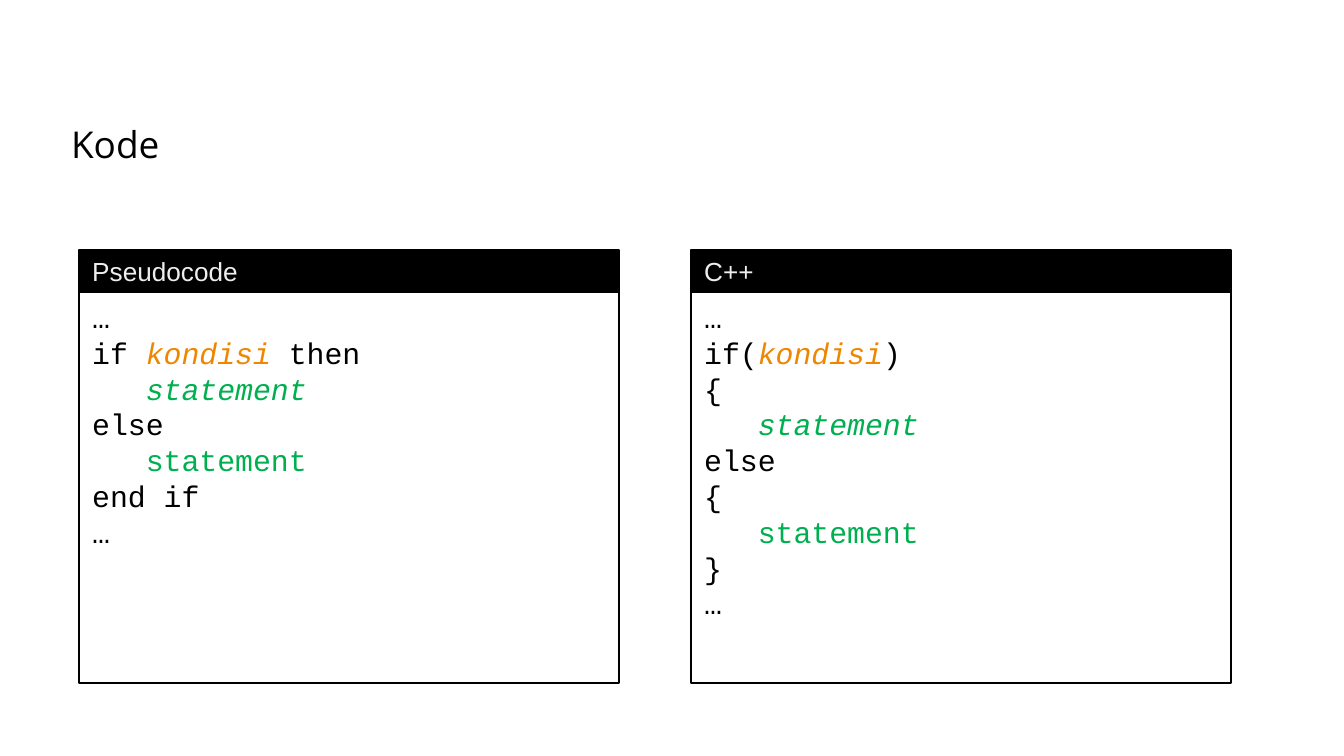
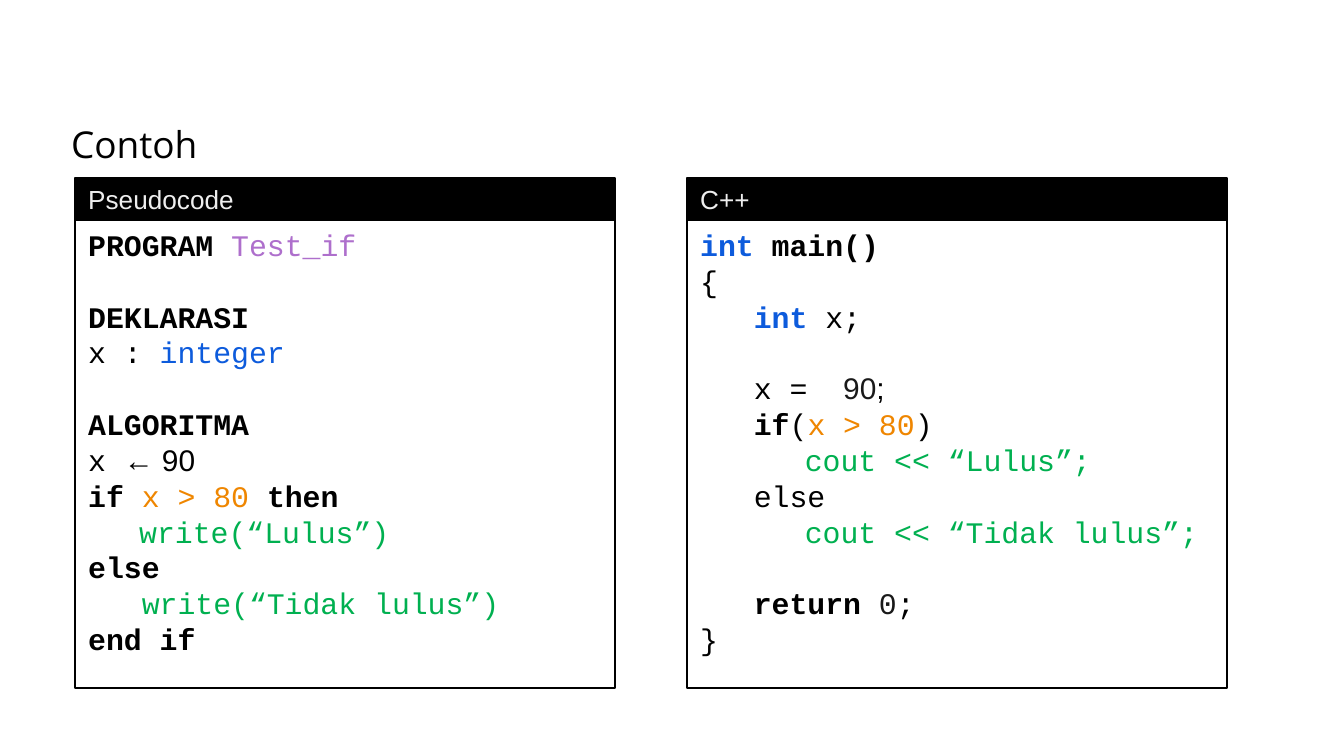
"""Build two slides that set pseudocode beside C++ for the if-else statement."""
import pptx
import pptx.dml.color
import pptx.enum.shapes
import pptx.enum.text
import pptx.util

RGB = pptx.dml.color.RGBColor
ANCHOR = pptx.enum.text.MSO_ANCHOR

BLACK = RGB(0x00, 0x00, 0x00)
WHITE = RGB(0xFF, 0xFF, 0xFF)
PALE = RGB(0xEE, 0xEE, 0xEE)
ORANGE = RGB(0xEF, 0x86, 0x00)
GREEN = RGB(0x00, 0xB0, 0x50)
VIOLET = RGB(0xAE, 0x6F, 0xCC)
BLUE = RGB(0x0D, 0x5B, 0xDC)
CHARCOAL = RGB(0x19, 0x19, 0x19)

PX = 914400 / 134.4
SLIDE_SIZE = (1344, 756)
TITLE_BOX = (58, 109, 1228, 58)
TITLE_INSET = 13
PANEL_WIDTH, PANEL_STEP = 540, 612
HEADING_HEIGHT = 42
HANGING = 51
LINE_PITCH = 19.2

STYLES = {
    "plain": {},
    "bold": {"bold": True},
    "condition": {"color": ORANGE},
    "condition name": {"color": ORANGE, "italic": True},
    "statement": {"color": GREEN},
    "statement name": {"color": GREEN, "italic": True},
    "program": {"color": VIOLET},
    "type": {"color": BLUE},
    "keyword type": {"color": BLUE, "bold": True},
    "digit": {"color": CHARCOAL},
    "arial": {"font": "Arial"},
    "arial digit": {"font": "Arial", "color": CHARCOAL},
}

KODE_PSEUDOCODE = [
    ["…"],
    ["if ", ("kondisi ", "condition name"), "then"],
    ["   ", ("statement", "statement name")],
    ["else"],
    ["   ", ("statement", "statement")],
    ["end if"],
    ["…"],
]
KODE_CPP = [
    ["…"],
    ["if(", ("kondisi", "condition name"), ")"],
    ["{"],
    ["   ", ("statement", "statement name")],
    ["else"],
    ["{"],
    ["   ", ("statement", "statement")],
    ["}"],
    ["…"],
]
CONTOH_PSEUDOCODE = [
    [("PROGRAM ", "bold"), ("Test_if", "program")],
    [],
    [("DEKLARASI", "bold")],
    ["x : ", ("integer", "type")],
    [],
    [("ALGORITMA", "bold")],
    ["x ", ("← 90", "arial")],
    [("if ", "bold"), ("x > 80 ", "condition"), ("then", "bold")],
    ["\t", ("write(“Lulus”)", "statement")],
    [("else", "bold")],
    [("   ", "bold"), ("write(“Tidak lulus”)", "statement")],
    [("end if", "bold")],
]
CONTOH_CPP = [
    [("int ", "keyword type"), ("main()", "bold")],
    ["{"],
    ["   ", ("int ", "keyword type"), "x;"],
    [],
    ["   x =  ", ("90", "arial digit"), (";", "arial")],
    ["   ", ("if", "bold"), "(", ("x > 80", "condition"), ")"],
    ["\t   ", ("cout << “Lulus”;", "statement")],
    ["   else"],
    ["\t   ", ("cout << “Tidak lulus”;", "statement")],
    [],
    [("   return ", "bold"), ("0", "digit"), ";"],
    ["}"],
]

SLIDES = [
    {"title": "Kode", "left": 79, "top": 250, "code_height": 391, "hanging_from": None,
     "panels": [("Pseudocode", KODE_PSEUDOCODE), ("C++", KODE_CPP)]},
    {"title": "Contoh", "left": 75, "top": 178, "code_height": 468, "hanging_from": (6, 4),
     "panels": [("Pseudocode", CONTOH_PSEUDOCODE), ("C++", CONTOH_CPP)]},
]


def px(length):
    return round(length * PX)


def write(frame, lines, font="Courier New", size=16, color=BLACK,
          anchor=ANCHOR.TOP, wrap=True, hanging_from=None):
    frame.word_wrap = wrap
    frame.vertical_anchor = anchor
    frame.auto_size = pptx.enum.text.MSO_AUTO_SIZE.NONE
    paragraph, gap = None, 0
    for number, line in enumerate(lines):
        if not line:
            gap += LINE_PITCH
            continue
        paragraph = frame.add_paragraph() if paragraph else frame.paragraphs[0]
        paragraph.alignment = pptx.enum.text.PP_ALIGN.LEFT
        paragraph.space_before = pptx.util.Pt(gap)
        gap = 0
        if hanging_from is not None and number >= hanging_from:
            properties = paragraph._p.get_or_add_pPr()
            properties.set("marL", str(px(HANGING)))
            properties.set("indent", str(-px(HANGING)))
        for part in line:
            words, style = (part, "plain") if isinstance(part, str) else part
            look = STYLES[style]
            run = paragraph.add_run()
            run.text = words
            run.font.name = look.get("font", font)
            run.font.size = pptx.util.Pt(size)
            run.font.bold = look.get("bold", False)
            run.font.italic = look.get("italic", False)
            run.font.color.rgb = look.get("color", color)


def add_box(slide, left, top, height, fill=None):
    box = slide.shapes.add_shape(pptx.enum.shapes.MSO_SHAPE.RECTANGLE,
                                 px(left), px(top), px(PANEL_WIDTH), px(height))
    box.shadow.inherit = False
    box.line.color.rgb = BLACK
    box.line.width = pptx.util.Pt(0.75)
    if fill is None:
        box.fill.background()
    else:
        box.fill.solid()
        box.fill.fore_color.rgb = fill
    return box.text_frame


def add_panel(slide, left, top, code_height, heading, code, hanging_from):
    write(add_box(slide, left, top + HEADING_HEIGHT, code_height), code,
          hanging_from=hanging_from)
    write(add_box(slide, left, top, HEADING_HEIGHT, fill=BLACK), [[heading]],
          font="Arial", size=14, color=PALE, anchor=ANCHOR.MIDDLE, wrap=False)


def add_title(slide, words):
    title = slide.shapes.title
    title.left, title.top, title.width, title.height = map(px, TITLE_BOX)
    frame = title.text_frame
    frame.margin_left = frame.margin_right = px(TITLE_INSET)
    frame.margin_top = frame.margin_bottom = px(TITLE_INSET)
    write(frame, [[words]], font="Open Sans", size=19.8)


def main():
    deck = pptx.Presentation()
    deck.slide_width, deck.slide_height = map(px, SLIDE_SIZE)
    background = deck.slide_master.background.fill
    background.solid()
    background.fore_color.rgb = WHITE
    for content in SLIDES:
        slide = deck.slides.add_slide(deck.slide_layouts[5])
        add_title(slide, content["title"])
        hanging = content["hanging_from"] or (None, None)
        for column, (heading, code) in enumerate(content["panels"]):
            add_panel(slide, content["left"] + column * PANEL_STEP, content["top"],
                      content["code_height"], heading, code, hanging[column])
    deck.save("out.pptx")


if __name__ == "__main__":
    main()
